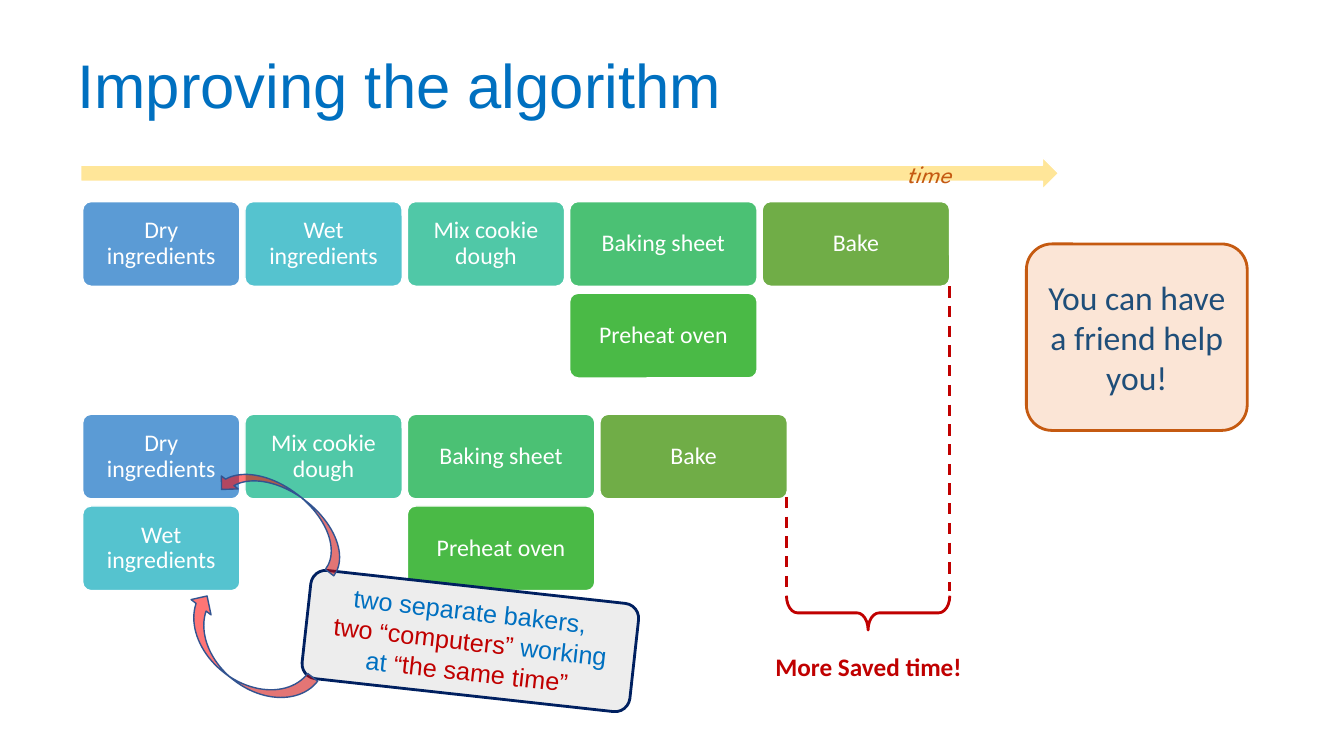
import pptx
import pptx.util
import pptx.dml.color
import pptx.enum.dml
import pptx.enum.shapes
import pptx.enum.text
import pptx.oxml
import pptx.oxml.ns

PX = 9144  # one hundredth of an inch
SHAPE = pptx.enum.shapes.MSO_SHAPE
ALIGN = pptx.enum.text.PP_ALIGN
ANCHOR = pptx.enum.text.MSO_ANCHOR

# label: (fill, width)
STEPS = {
    "Dry ingredients": ("5B9BD5", 156),
    "Wet ingredients": ("55C3CF", 156),
    "Mix cookie dough": ("50C8A7", 156),
    "Baking sheet": ("4BC174", 186),
    "Preheat oven": ("4ABA46", 186),
    "Bake": ("70AD47", 186),
}
STEP_LEFT, STEP_HEIGHT, COLUMN_GAP, ROW_GAP = 82, 84, 5, 7
SCHEDULES = [
    (200, [["Dry ingredients"], ["Wet ingredients"], ["Mix cookie dough"],
           ["Baking sheet", "Preheat oven"], ["Bake"]]),
    (411, [["Dry ingredients", "Wet ingredients"], ["Mix cookie dough"],
           ["Baking sheet", "Preheat oven"], ["Bake"]]),
]
SAVED_RED = "C00000"


def color(value):
    return pptx.dml.color.RGBColor.from_string(value)


def box(*lengths):
    return [length * PX for length in lengths]


def add_text(shape, paragraphs, size, font, align=ALIGN.CENTER, anchor=ANCHOR.MIDDLE,
             margin=None, spacing=None, bold=False, italic=False):
    """Write paragraphs, each a list of (text, colour) runs."""
    frame = shape.text_frame
    frame.word_wrap = True
    frame.vertical_anchor = anchor
    if margin is not None:
        frame.margin_left = frame.margin_right = margin * PX
        frame.margin_top = frame.margin_bottom = margin * PX
    for index, runs in enumerate(paragraphs):
        paragraph = frame.add_paragraph() if index else frame.paragraphs[0]
        paragraph.alignment = align
        if spacing:
            paragraph.line_spacing = spacing
        for text, text_color in runs:
            run = paragraph.add_run()
            run.text = text
            run.font.size = pptx.util.Pt(size)
            run.font.name = font
            run.font.bold = bold
            run.font.italic = italic
            run.font.color.rgb = color(text_color)


def add_label(slide, position, text, text_color, size, font, **style):
    label = slide.shapes.add_textbox(*box(*position))
    add_text(label, [[(text, text_color)]], size, font, **style)


def add_figure(slide, kind, position, fill, line, width, rotation=0, adjustments=()):
    shape = slide.shapes.add_shape(kind, *box(*position))
    shape.shadow.inherit = False
    shape.rotation = rotation
    for index, value in enumerate(adjustments):
        shape.adjustments[index] = value
    if fill:
        shape.fill.solid()
        shape.fill.fore_color.rgb = color(fill)
    else:
        shape.fill.background()
    shape.line.color.rgb = color(line)
    shape.line.width = pptx.util.Pt(width)
    return shape


def add_schedule(slide, top, columns):
    left = STEP_LEFT
    for column in columns:
        for row, label in enumerate(column):
            fill, width = STEPS[label]
            step_top = top + row * (STEP_HEIGHT + ROW_GAP)
            step = add_figure(slide, SHAPE.ROUNDED_RECTANGLE,
                              (left, step_top, width, STEP_HEIGHT),
                              fill, "FFFFFF", 1, adjustments=[0.1])
            add_text(step, [[(label, "FFFFFF")]], 17, "Calibri", margin=17, spacing=0.9)
        left += width + COLUMN_GAP


def add_dashed_drop(slide, x, top, bottom):
    line = slide.shapes.add_connector(
        pptx.enum.shapes.MSO_CONNECTOR.STRAIGHT, *box(x, top, x, bottom))
    line.line.color.rgb = color(SAVED_RED)
    line.line.width = pptx.util.Pt(2)
    line.line.dash_style = pptx.enum.dml.MSO_LINE.DASH
    line.element.spPr.append(pptx.oxml.parse_xml(
        "<a:effectLst %s/>" % pptx.oxml.ns.nsdecls("a")))


def add_curved_arrow(slide, position, flipped=False):
    arrow = add_figure(slide, SHAPE.CURVED_LEFT_ARROW, position, "FF0000", "325491", 1, 127.6)
    if flipped:
        arrow.element.spPr.xfrm.set("flipH", "1")
    fill_color = arrow.element.spPr.find(".//" + pptx.oxml.ns.qn("a:srgbClr"))
    fill_color.append(pptx.oxml.parse_xml(
        '<a:alpha %s val="54000"/>' % pptx.oxml.ns.nsdecls("a")))


def add_saved_time(slide):
    add_figure(slide, SHAPE.LEFT_BRACE, (844, 527, 34, 162), None, SAVED_RED, 2,
               270, [0.323, 0.5])
    add_dashed_drop(slide, 942, 284, 586)
    add_dashed_drop(slide, 780, 493, 585)
    add_label(slide, (728, 641, 267, 40), "More Saved time!", SAVED_RED, 18, "Calibri",
              anchor=ANCHOR.TOP, bold=True)


def add_bakers_note(slide):
    note = add_figure(slide, SHAPE.ROUNDED_RECTANGLE, (303, 582, 327, 108),
                      "EDEDED", "002060", 2, 6.3, [0.137])
    add_text(note, [
        [("two separate bakers, ", "0070C0")],
        [("two “computers” ", "C00000"), ("working at ", "0070C0"),
         ("“the same time”", "C00000")],
    ], 18, "Arial")
    add_curved_arrow(slide, (215, 574, 50, 151))
    add_curved_arrow(slide, (263, 433, 42, 151), flipped=True)


def main():
    presentation = pptx.Presentation()
    presentation.slide_width, presentation.slide_height = box(1333, 750)
    slide = presentation.slides.add_slide(presentation.slide_layouts[6])

    add_label(slide, (67, 40, 1175, 95), "Improving the algorithm", "0070C0", 44, "Arial",
              align=ALIGN.LEFT, spacing=0.9)
    for top, columns in SCHEDULES:
        add_schedule(slide, top, columns)

    friend = add_figure(slide, SHAPE.ROUNDED_RECTANGLE, (1018, 242, 219, 185),
                        "FBE5D6", "C55A11", 2, adjustments=[0.137])
    add_text(friend, [[("You can have a friend help you!", "1F4E79")]], 24, "Calibri")

    add_saved_time(slide)
    add_bakers_note(slide)
    add_figure(slide, SHAPE.RIGHT_ARROW, (80, 156, 970, 32), "FFE699", "FFFFFF", 1)
    add_label(slide, (889, 152, 94, 40), "time", "C55A11", 18, "League Spartan",
              align=ALIGN.LEFT, anchor=ANCHOR.TOP, italic=True)
    presentation.save("out.pptx")


if __name__ == "__main__":
    main()
